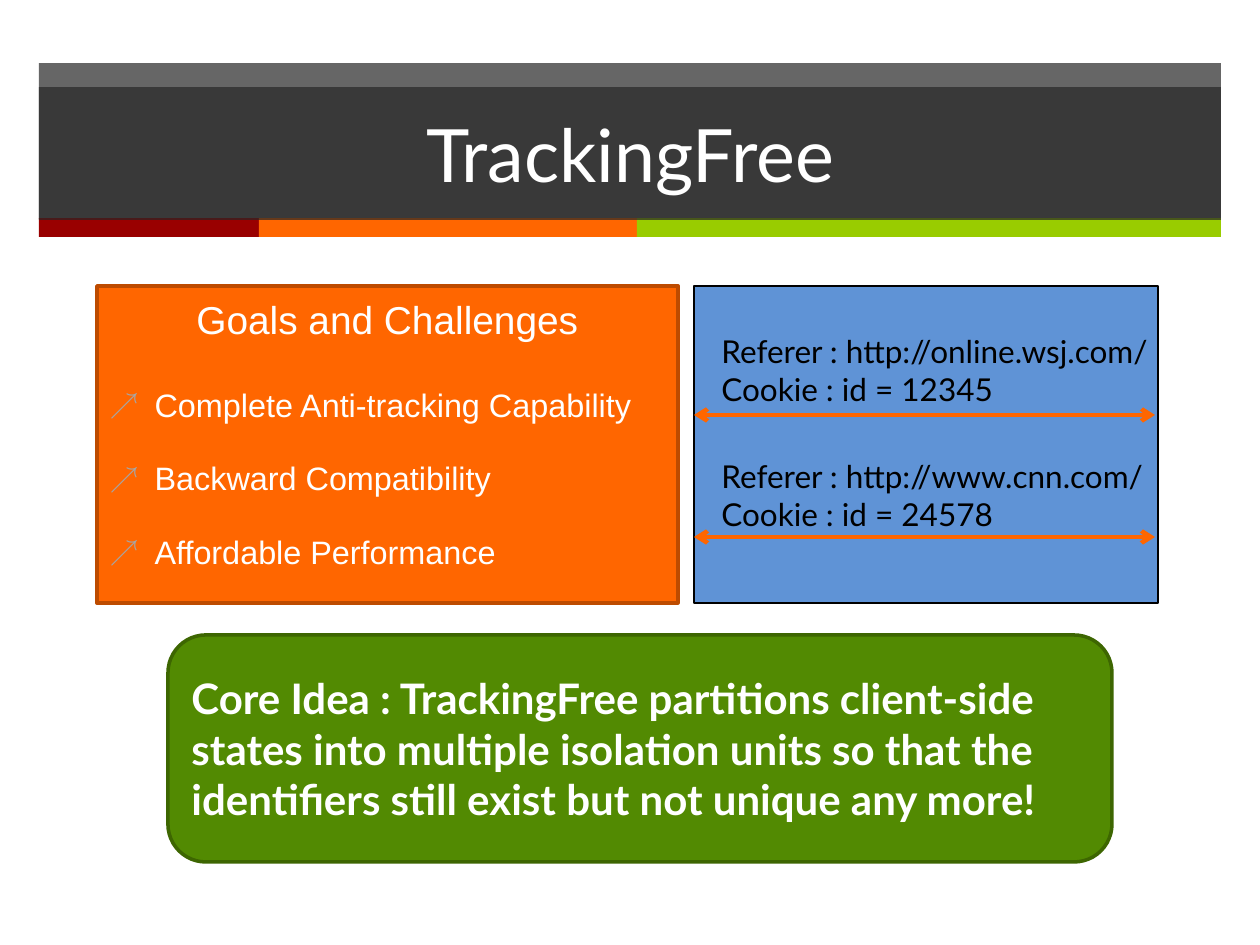
import lxml.etree
import pptx
import pptx.dml.color
import pptx.enum.shapes
import pptx.enum.text
import pptx.oxml.ns
import pptx.util

COLORS = {
    "charcoal": "262626", "red": "990000", "orange": "FF6600", "rust": "BD4B00",
    "lime": "99CC00", "green": "528A02", "forest": "3D6601", "blue": "5F93D6",
    "gray": "A6A6A6", "white": "FFFFFF", "black": "000000",
}
SHAPES = pptx.enum.shapes.MSO_SHAPE
ALIGN = pptx.enum.text.PP_ALIGN
ANCHOR = pptx.enum.text.MSO_ANCHOR
AUTOSIZE = pptx.enum.text.MSO_AUTO_SIZE


def px(length):
    """Turn px into EMU at 126 px to the inch."""
    return pptx.util.Emu(round(length * 914400 / 126))


def rgb(name):
    """Look up a named colour."""
    return pptx.dml.color.RGBColor.from_string(COLORS[name])


def child(parent, tag, **attributes):
    """Append a DrawingML element and return it."""
    return lxml.etree.SubElement(parent, pptx.oxml.ns.qn(tag), attributes)


def write(para, text, font="Lato", size=18, color="black", bold=False,
          align=ALIGN.LEFT, before=0, bullet=None, hang=0):
    """Fill a paragraph with one formatted span."""
    para.alignment = align
    para.space_before = pptx.util.Pt(before)
    props = para._p.get_or_add_pPr()
    props.set("marL", str(px(hang)))
    props.set("indent", str(-px(hang)))
    if bullet:
        child(child(props, "a:buClr"), "a:srgbClr", val=COLORS["gray"])
        child(props, "a:buSzPct", val="90000")
        child(props, "a:buFont", typeface=font)
        child(props, "a:buChar", char=bullet)
    else:
        child(props, "a:buNone")
    span = para.add_run()
    span.text = text
    span.font.name = font
    span.font.size = pptx.util.Pt(size)
    span.font.bold = bold
    span.font.color.rgb = rgb(color)


class SlideBuilder:
    """Hold the deck, its current slide and the shared style."""

    def __init__(self):
        """Start a deck with one title-and-content page."""
        self.deck = pptx.Presentation()
        self.deck.slide_width, self.deck.slide_height = px(1260), px(945)
        self.page = self.deck.slides.add_slide(self.deck.slide_layouts[1])

    def paint(self, shape, fill, line=None, weight=2, opacity=100):
        """Set the fill and outline of a shape."""
        shape.fill.solid()
        shape.fill.fore_color.rgb = rgb(fill)
        if opacity < 100:
            tint = shape.element.spPr.find(".//" + pptx.oxml.ns.qn("a:srgbClr"))
            child(tint, "a:alpha", val=str(opacity * 1000))
        if line:
            shape.line.color.rgb = rgb(line)
            shape.line.width = pptx.util.Pt(weight)
        else:
            shape.line.fill.background()

    def box(self, left, top, width, height, fill, kind=SHAPES.RECTANGLE, **style):
        """Add a preset shape."""
        shape = self.page.shapes.add_shape(kind, px(left), px(top), px(width), px(height))
        shape.shadow.inherit = False
        self.paint(shape, fill, **style)
        return shape

    def placeholder(self, index, left, top, width, height, fill, **style):
        """Place and paint a template placeholder above the shapes so far."""
        shape = self.page.placeholders[index]
        shape.left, shape.top, shape.width, shape.height = map(px, (left, top, width, height))
        self.page.shapes.element.append(shape.element)
        self.paint(shape, fill, **style)
        shape.text_frame.auto_size = AUTOSIZE.NONE
        return shape

    def fill_text(self, shape, lines, anchor=ANCHOR.TOP, wrap=True, **style):
        """Write lines into a shape, each with its own format on top of the shared one."""
        frame = shape.text_frame
        frame.word_wrap = wrap
        frame.vertical_anchor = anchor
        for number, (text, own) in enumerate(lines):
            para = frame.add_paragraph() if number else frame.paragraphs[0]
            write(para, text, **{**style, **own})

    def label(self, left, top, width, height, lines):
        """Add an unwrapped text box."""
        shape = self.page.shapes.add_textbox(px(left), px(top), px(width), px(height))
        self.fill_text(shape, [(line, {}) for line in lines], wrap=False)
        shape.text_frame.auto_size = AUTOSIZE.SHAPE_TO_FIT_TEXT

    def double_arrow(self, left, right, y, color):
        """Add a horizontal line with arrowheads at both ends."""
        connector = self.page.shapes.add_connector(
            pptx.enum.shapes.MSO_CONNECTOR.STRAIGHT, px(left), px(y), px(right), px(y))
        connector.line.color.rgb = rgb(color)
        connector.line.width = pptx.util.Pt(2.5)
        outline = connector.element.spPr.find(pptx.oxml.ns.qn("a:ln"))
        child(outline, "a:headEnd", type="arrow")
        child(outline, "a:tailEnd", type="arrow")
        child(connector.element.spPr, "a:effectLst")


def main():
    """Build the TrackingFree slide."""
    slide = SlideBuilder()

    slide.box(39, 63, 1182, 156, "charcoal", opacity=70)
    left = 39
    for width, color in ((220, "red"), (378, "orange"), (584, "lime")):
        slide.box(left, 218, width, 19, color)
        left += width
    title = slide.placeholder(0, 39, 87, 1182, 133, "charcoal", opacity=70)
    slide.fill_text(title, [("TrackingFree", {})], anchor=ANCHOR.MIDDLE,
                    size=42, color="white", align=ALIGN.CENTER)

    goals = slide.placeholder(1, 97, 286, 581, 317, "orange", line="rust")
    goals.text_frame.margin_top = px(10)
    item = {"size": 18.5, "before": 20, "bullet": "↗", "hang": 45}
    slide.fill_text(goals, [
        ("Goals and Challenges", {"size": 22.2, "align": ALIGN.CENTER}),
        ("Complete Anti-tracking Capability", {**item, "before": 24}),
        ("Backward Compatibility", item),
        ("Affordable Performance", item),
    ], font="Arial", color="white")

    idea = slide.box(168, 635, 944, 227, "green", kind=SHAPES.ROUNDED_RECTANGLE, line="forest")
    slide.fill_text(idea, [(
        "Core Idea : TrackingFree partitions client-side states into multiple isolation "
        "units so that the identifiers still exist but not unique any more!", {})],
        anchor=ANCHOR.MIDDLE, size=24, color="white", bold=True)

    slide.box(694, 286, 464, 317, "blue", line="black", weight=0.75)
    requests = (
        (326, 415, 478, "http://online.wsj.com/", 12345),
        (451, 537, 455, "http://www.cnn.com/", 24578),
    )
    for top, arrow, width, address, cookie in requests:
        slide.double_arrow(694, 1155, arrow, "orange")
        slide.label(709, top, width, 78, [f"Referer : {address}", f"Cookie : id = {cookie}"])

    slide.deck.save("out.pptx")


if __name__ == "__main__":
    main()
